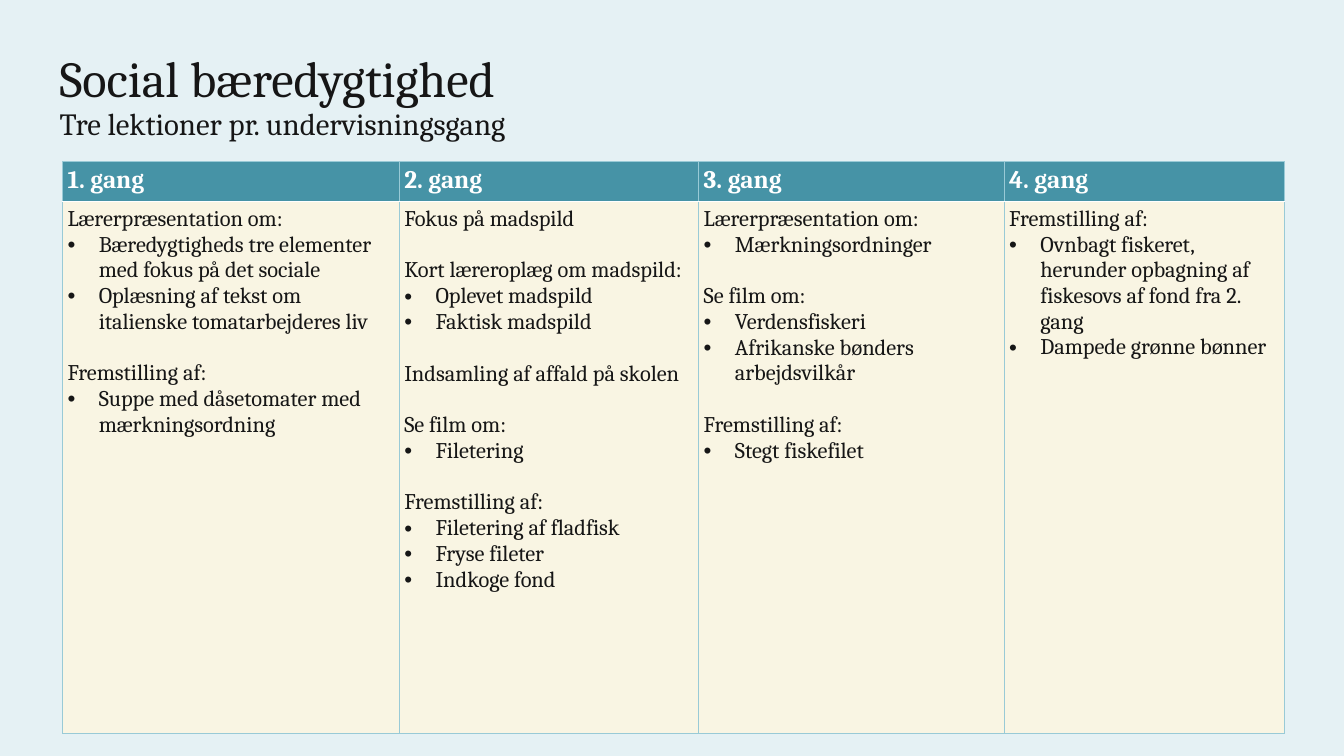
"""Build the slide with the lesson plan for social sustainability."""
from dataclasses import dataclass

from lxml import etree
from pptx import Presentation
from pptx.dml.color import RGBColor
from pptx.enum.text import MSO_ANCHOR, MSO_AUTO_SIZE, PP_ALIGN
from pptx.oxml.ns import qn
from pptx.util import Inches, Pt

MIDDLE = MSO_ANCHOR.MIDDLE
TOP = MSO_ANCHOR.TOP
NO_FIT = MSO_AUTO_SIZE.NONE
LEFT = PP_ALIGN.LEFT
TITLE_ONLY = 5
SLIDE_WIDTH = Inches(13.33)
SLIDE_HEIGHT = Inches(7.5)


@dataclass(frozen=True)
class Theme:
    """Colours, type sizes and spacings of the slide."""

    font: str = "Cambria"
    background: str = "E5F1F4"
    ink: str = "161616"
    white: str = "FFFFFF"
    header: str = "4693A6"
    body: str = "F9F5E3"
    border: str = "99CAD6"
    title_size: float = 36
    subtitle_size: float = 22
    header_size: float = 18
    body_size: float = 16
    section_gap: float = 18.5
    title_leading: float = 0.9
    thin: float = 0.5
    thick: float = 1
    cell_margin: float = 0.05
    bullet_indent: float = 0.31


THEME = Theme()
TITLE_PLACE = (3.68, 3.47, 58.96, 19.07)
TABLE_LEFT, TABLE_TOP = 4.65, 21.33
COLUMN_SHARES = (25.06, 22.28, 22.73, 20.86)
ROW_SHARES = (5.28, 70.4)

TITLE_LINES = (
    ("Social bæredygtighed", THEME.title_size),
    ("Tre lektioner pr. undervisningsgang", THEME.subtitle_size),
)
SESSIONS = (
    ("1. gang", (
        ("Lærerpræsentation om:", (
            "Bæredygtigheds tre elementer med fokus på det sociale",
            "Oplæsning af tekst om italienske tomatarbejderes liv")),
        ("Fremstilling af:", ("Suppe med dåsetomater med mærkningsordning",)),
    )),
    ("2. gang", (
        ("Fokus på madspild", ()),
        ("Kort læreroplæg om madspild:", ("Oplevet madspild", "Faktisk madspild")),
        ("Indsamling af affald på skolen", ()),
        ("Se film om:", ("Filetering",)),
        ("Fremstilling af:", ("Filetering af fladfisk", "Fryse fileter", "Indkoge fond")),
    )),
    ("3. gang", (
        ("Lærerpræsentation om:", ("Mærkningsordninger",)),
        ("Se film om:", ("Verdensfiskeri", "Afrikanske bønders arbejdsvilkår")),
        ("Fremstilling af:", ("Stegt fiskefilet",)),
    )),
    ("4. gang", (
        ("Fremstilling af:", (
            "Ovnbagt fiskeret, herunder opbagning af fiskesovs af fond fra 2. gang",
            "Dampede grønne bønner")),
    )),
)


def across(share):
    """Return a percentage of the slide's width."""
    return round(SLIDE_WIDTH * share / 100)


def down(share):
    """Return a percentage of the slide's height."""
    return round(SLIDE_HEIGHT * share / 100)


def next_para(frame):
    """Return the first paragraph while it is empty, else a new one."""
    first = frame.paragraphs[0]
    return frame.add_paragraph() if first.runs else first


def add_span(para, text, size, color, bold=False):
    """Add one formatted run to a paragraph."""
    span = para.add_run()
    span.text = text
    span.font.name = THEME.font
    span.font.size = Pt(size)
    span.font.bold = bold
    span.font.color.rgb = RGBColor.from_string(color)


def make_bullet(para):
    """Give a paragraph a hanging bullet."""
    indent = Inches(THEME.bullet_indent)
    properties = para._p.get_or_add_pPr()
    properties.set("marL", str(indent))
    properties.set("indent", str(-indent))
    etree.SubElement(properties, qn("a:buFont"), typeface="Arial")
    etree.SubElement(properties, qn("a:buChar"), char="•")


def add_border(cell, side, color, width):
    """Draw one side of a cell's border."""
    properties = cell._tc.get_or_add_tcPr()
    line = etree.SubElement(properties, qn(f"a:ln{side}"), w=str(Pt(width)))
    fill = etree.SubElement(line, qn("a:solidFill"))
    etree.SubElement(fill, qn("a:srgbClr"), val=color)


def format_cell(cell, fill, top, bottom):
    """Set a cell's borders, fill and margins."""
    side_line = (THEME.border, THEME.thin)
    lines = {"L": side_line, "R": side_line, "T": top, "B": bottom}
    for side, line in lines.items():
        add_border(cell, side, *line)
    cell.fill.solid()
    cell.fill.fore_color.rgb = RGBColor.from_string(fill)
    margin = Inches(THEME.cell_margin)
    cell.margin_left = cell.margin_right = margin
    cell.margin_top = cell.margin_bottom = margin
    cell.vertical_anchor = TOP


def fill_sections(frame, sections):
    """Write the sections of a session with their bullets."""
    for index, (heading, points) in enumerate(sections):
        para = next_para(frame)
        if index:
            para.space_before = Pt(THEME.section_gap)
        add_span(para, heading, THEME.body_size, THEME.ink)
        for point in points:
            para = next_para(frame)
            make_bullet(para)
            add_span(para, point, THEME.body_size, THEME.ink)


def add_title(page):
    """Place the title and its second line in the title placeholder."""
    title = page.shapes.title
    left, top, width, height = TITLE_PLACE
    title.left, title.top = across(left), down(top)
    title.width, title.height = across(width), down(height)
    frame = title.text_frame
    frame.word_wrap = True
    frame.auto_size = NO_FIT
    frame.vertical_anchor = MIDDLE
    for text, size in TITLE_LINES:
        para = next_para(frame)
        para.alignment = LEFT
        para.line_spacing = THEME.title_leading
        add_span(para, text, size, THEME.ink)


def add_plan(page):
    """Add the table with one column for each session."""
    table = page.shapes.add_table(
        len(ROW_SHARES), len(SESSIONS), across(TABLE_LEFT), down(TABLE_TOP),
        across(sum(COLUMN_SHARES)), down(sum(ROW_SHARES))).table
    table.horz_banding = False
    for row, share in zip(table.rows, ROW_SHARES):
        row.height = down(share)
    edge = (THEME.border, THEME.thin)
    divider = (THEME.white, THEME.thick)
    for index, (name, sections) in enumerate(SESSIONS):
        table.columns[index].width = across(COLUMN_SHARES[index])
        header, body = table.cell(0, index), table.cell(1, index)
        format_cell(header, THEME.header, edge, divider)
        format_cell(body, THEME.body, divider, edge)
        add_span(next_para(header.text_frame), name, THEME.header_size, THEME.white, True)
        fill_sections(body.text_frame, sections)


def main():
    """Create and save the deck."""
    deck = Presentation()
    deck.slide_width, deck.slide_height = SLIDE_WIDTH, SLIDE_HEIGHT
    page = deck.slides.add_slide(deck.slide_layouts[TITLE_ONLY])
    page.background.fill.solid()
    page.background.fill.fore_color.rgb = RGBColor.from_string(THEME.background)
    add_title(page)
    add_plan(page)
    deck.save("out.pptx")


if __name__ == "__main__":
    main()
